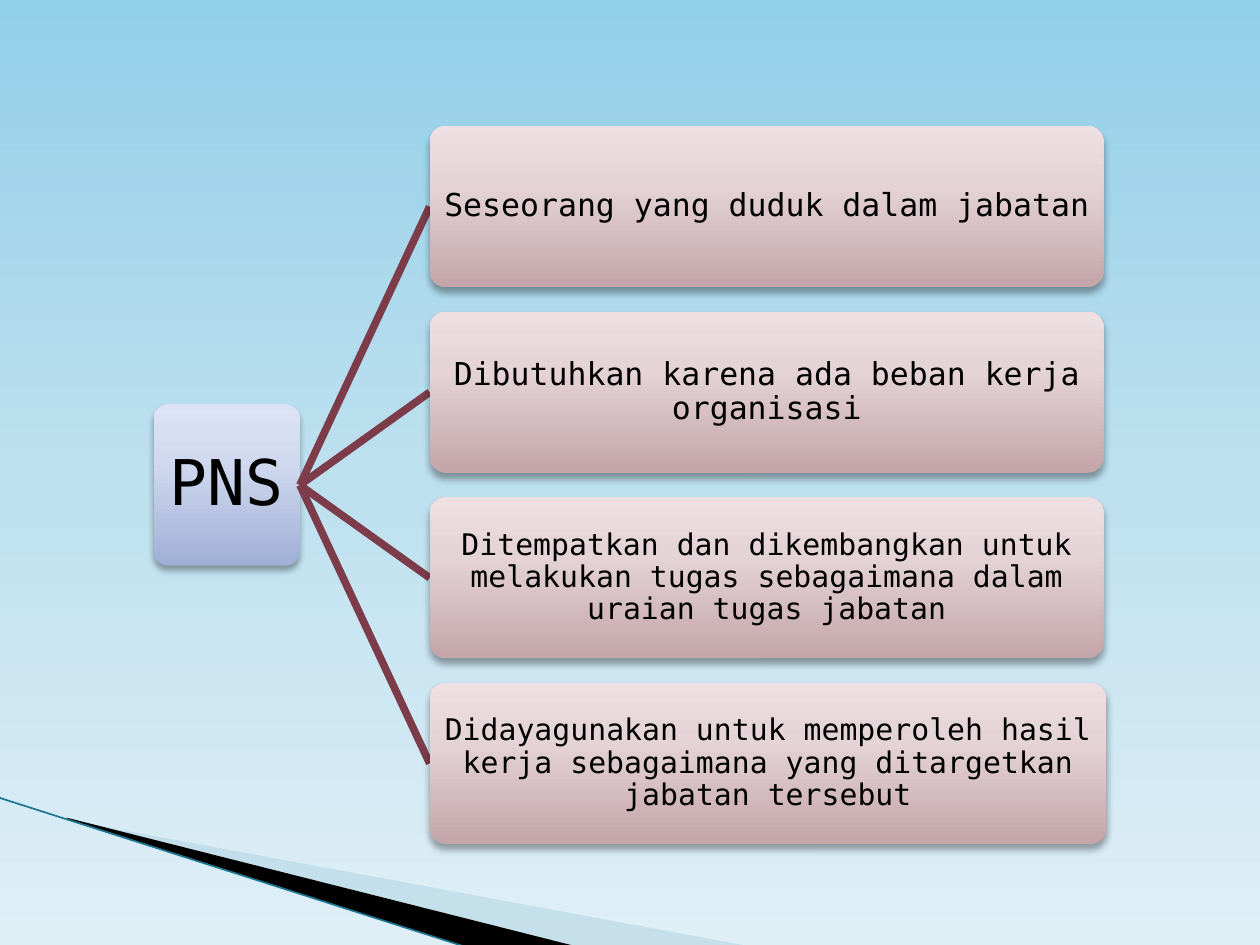
from copy import deepcopy

from lxml import etree
from pptx import Presentation
from pptx.dml.color import RGBColor
from pptx.enum.shapes import MSO_CONNECTOR, MSO_SHAPE
from pptx.enum.text import MSO_ANCHOR, PP_ALIGN
from pptx.oxml.ns import qn
from pptx.util import Inches, Pt

ROUNDED = MSO_SHAPE.ROUNDED_RECTANGLE
STRAIGHT = MSO_CONNECTOR.STRAIGHT
MIDDLE = MSO_ANCHOR.MIDDLE
CENTER = PP_ALIGN.CENTER
LEFT_SIDE, RIGHT_SIDE = 1, 3
FONT = "DejaVu Sans Mono"
COLORS = {"text": "000000", "branch": "7D3C4A", "shadow": "000000",
          "pale_wedge": "A0CBDC", "dark_wedge": "000000", "edge": "1B7490"}
SKY = [(0, "92CFE8"), (0.5, "BDE0EF"), (1, "DFEFF6")]
BLUE = [(0, "9FAFD6"), (0.65, "D0D9EF"), (1, "DCE3F6")]
ROSE = [(0, "C4A5A9"), (0.65, "E5D4D7"), (1, "EEE0E2")]


def rgb(name):
    return RGBColor.from_string(COLORS[name])


class SlideBuilder:
    def __init__(self, slide):
        self.slide = slide

    def gradient(self, fill, owner, stops, angle):
        fill.gradient()
        fill.gradient_angle = angle
        stop_list = owner.xpath(".//a:gsLst")[0]
        while len(stop_list) < len(stops):
            stop_list.append(deepcopy(stop_list[-1]))
        for stop, (position, color) in zip(fill.gradient_stops, stops):
            stop.position = position
            stop.color.rgb = RGBColor.from_string(color)

    def background(self, stops):
        self.gradient(self.slide.background.fill, self.slide._element, stops, 270)

    def wedge(self, points, color, alpha=None):
        corners = [(Inches(x), Inches(y)) for x, y in points]
        builder = self.slide.shapes.build_freeform(*corners[0])
        builder.add_line_segments(corners[1:], close=True)
        shape = builder.convert_to_shape()
        shape.shadow.inherit = False
        shape.fill.solid()
        shape.fill.fore_color.rgb = rgb(color)
        shape.line.fill.background()
        if alpha is not None:
            paint = shape._element.spPr.find(qn("a:solidFill"))[0]
            etree.SubElement(paint, qn("a:alpha")).set("val", str(alpha * 1000))

    def line(self, start, end, color, width):
        connector = self.slide.shapes.add_connector(
            STRAIGHT, *[Inches(value) for value in (*start, *end)])
        connector.line.color.rgb = rgb(color)
        connector.line.width = Pt(width)
        etree.SubElement(connector._element.spPr, qn("a:effectLst"))
        return connector

    def box(self, left, top, width, height, text, size, stops, inset):
        shape = self.slide.shapes.add_shape(
            ROUNDED, Inches(left), Inches(top), Inches(width), Inches(height))
        shape.adjustments[0] = 0.1
        self.gradient(shape.fill, shape._element, stops, 90)
        shape.line.fill.background()
        self.soft_shadow(shape)
        frame = shape.text_frame
        frame.text = text
        frame.word_wrap = True
        frame.vertical_anchor = MIDDLE
        frame.margin_left = frame.margin_right = Inches(inset)
        frame.margin_top = frame.margin_bottom = Inches(inset)
        paragraph = frame.paragraphs[0]
        paragraph.alignment = CENTER
        paragraph.line_spacing = 0.9
        font = paragraph.runs[0].font
        font.name, font.size = FONT, Pt(size)
        font.color.rgb = rgb("text")
        return shape

    def soft_shadow(self, shape):
        shape.shadow.inherit = False
        effects = shape._element.spPr.find(qn("a:effectLst"))
        shadow = etree.SubElement(
            effects, qn("a:outerShdw"), blurRad=str(Pt(4)), dist=str(Pt(3)),
            dir="5400000", rotWithShape="0")
        color = etree.SubElement(shadow, qn("a:srgbClr"), val=COLORS["shadow"])
        etree.SubElement(color, qn("a:alpha"), val="35000")


def main():
    prs = Presentation()
    prs.slide_width, prs.slide_height = Inches(10), Inches(7.5)
    builder = SlideBuilder(prs.slides.add_slide(prs.slide_layouts[6]))

    # Background with the corner decoration
    builder.background(SKY)
    builder.wedge([(0.55, 6.51), (5.95, 7.51), (4.56, 7.51), (0.55, 6.5)],
                  "pale_wedge", 40)
    builder.wedge([(0.53, 6.49), (4.57, 7.51), (3.72, 7.52), (0.54, 6.5)],
                  "dark_wedge")
    builder.line((-0.01, 6.33), (3.71, 7.52), "edge", 0.95)

    # Root of the tree
    height = 1.28
    root = builder.box(1.22, 3.21, 1.16, height, "PNS", 36, BLUE, 0.03)

    # Branches: text, size, box width
    branches = [
        ("Seseorang yang duduk dalam jabatan", 18, 5.35),
        ("Dibutuhkan karena ada beban kerja organisasi", 18, 5.35),
        ("Ditempatkan dan dikembangkan untuk melakukan tugas sebagaimana "
         "dalam uraian tugas jabatan", 17, 5.35),
        ("Didayagunakan untuk memperoleh hasil kerja sebagaimana yang "
         "ditargetkan jabatan tersebut", 17, 5.37),
    ]
    left, first_top, pitch = 3.41, 1, 1.473
    for index, (text, size, width) in enumerate(branches):
        top = first_top + index * pitch
        branch = builder.line((2.38, 3.85), (left, top + height / 2), "branch", 4.33)
        duty = builder.box(left, top, width, height, text, size, ROSE, 0.01)
        branch.begin_connect(root, RIGHT_SIDE)
        branch.end_connect(duty, LEFT_SIDE)

    prs.save("out.pptx")


if __name__ == "__main__":
    main()
